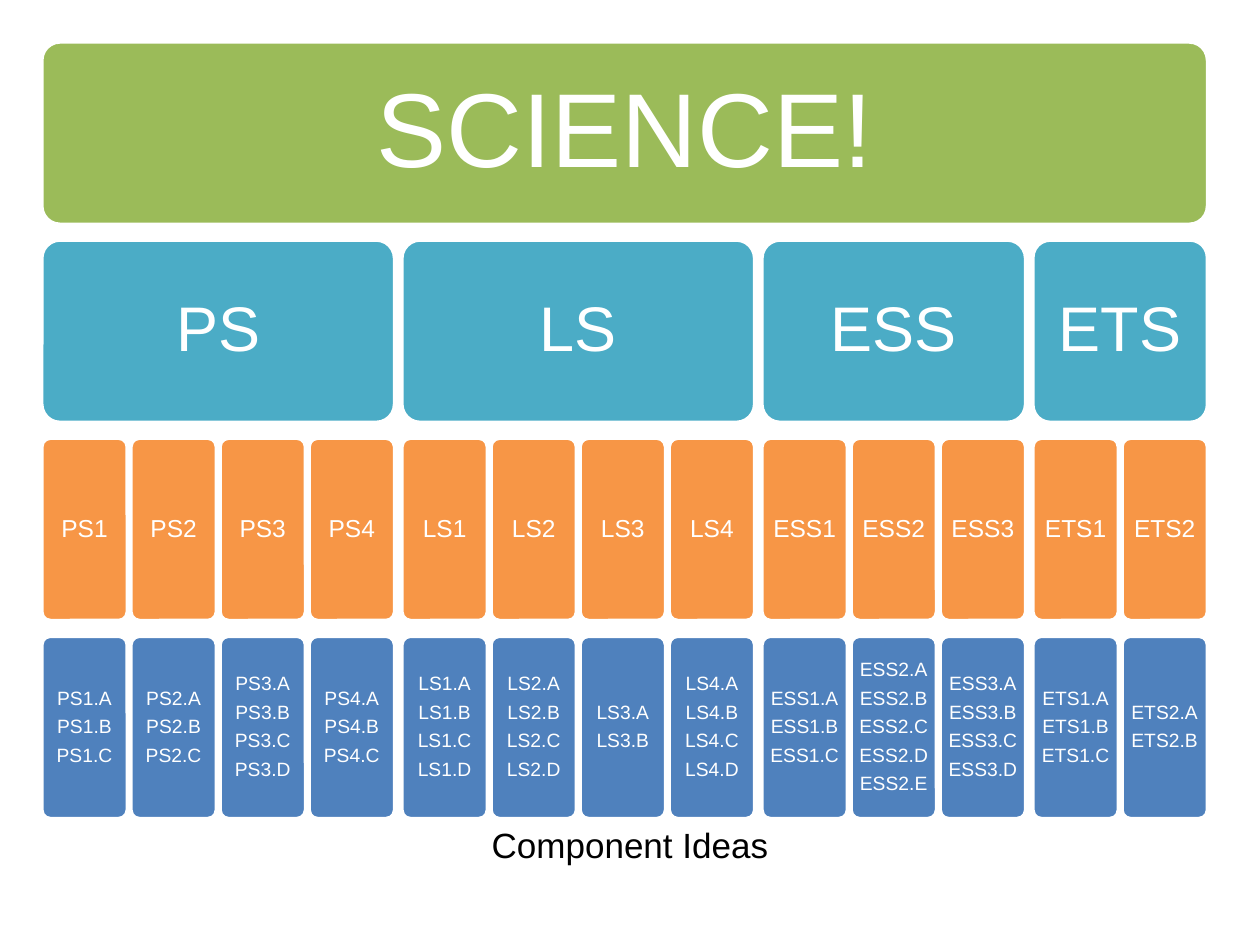
from dataclasses import dataclass

from pptx import Presentation
from pptx import util as u
from pptx.dml import color
from pptx.enum import shapes, text


@dataclass(frozen=True)
class Level:
    """Look of one row of cards."""
    fill: str
    size: float
    inset: float


@dataclass(frozen=True)
class Theme:
    """Colours, type sizes and spacing of the slide."""
    font: str = "Arial"
    light: str = "FFFFFF"
    dark: str = "000000"
    caption_size: float = 20
    gap: float = 2.07
    group_gap: float = 4.14
    row_gap: float = 9
    subject: Level = Level("9BBB59", 60, 18)
    discipline: Level = Level("4BACC6", 36, 10.8)
    core: Level = Level("F79646", 14, 4.2)
    component: Level = Level("4F81BD", 11, 3.3)


@dataclass(frozen=True)
class Box:
    """A rectangle in points."""
    left: float
    top: float
    width: float
    height: float

    def points(self):
        """Return the four lengths for a shape call."""
        return [u.Pt(value) for value in (self.left, self.top, self.width, self.height)]


THEME = Theme()
IDEAS = {
    "PS": ["ABC", "ABC", "ABCD", "ABC"],
    "LS": ["ABCD", "ABCD", "AB", "ABCD"],
    "ESS": ["ABC", "ABCDE", "ABCD"],
    "ETS": ["ABC", "AB"],
}


def write_lines(frame, lines, size, tint):
    """Write centred paragraphs in a text frame."""
    frame.word_wrap = True
    for index, line in enumerate(lines):
        para = frame.paragraphs[0] if index == 0 else frame.add_paragraph()
        para.text = line
        para.alignment = text.PP_ALIGN.CENTER
        para.font.name = THEME.font
        para.font.size = u.Pt(size)
        para.font.color.rgb = color.RGBColor.from_string(tint)


def add_card(page, box, level, lines):
    """Draw a rounded card with centred text."""
    card = page.shapes.add_shape(shapes.MSO_SHAPE.ROUNDED_RECTANGLE, *box.points())
    card.adjustments[0] = 0.1
    card.shadow.inherit = False
    card.fill.solid()
    card.fill.fore_color.rgb = color.RGBColor.from_string(level.fill)
    card.line.color.rgb = color.RGBColor.from_string(THEME.light)
    card.line.width = u.Pt(2)
    frame = card.text_frame
    frame.vertical_anchor = text.MSO_ANCHOR.MIDDLE
    frame.margin_left = frame.margin_right = u.Pt(level.inset)
    frame.margin_top = frame.margin_bottom = u.Pt(level.inset)
    write_lines(frame, lines, level.size, THEME.light)
    for para in frame.paragraphs:
        para.line_spacing = 0.9
        para.space_after = u.Pt(round(level.size * 0.4, 1))


def add_discipline(page, box, name, components, row_height):
    """Place a discipline card above its core and component ideas."""
    pitch = row_height + THEME.row_gap
    count = len(components)
    width = (box.width - THEME.gap * (count - 1)) / count
    add_card(page, Box(box.left, box.top, box.width, row_height), THEME.discipline, [name])
    for index, letters in enumerate(components):
        left = box.left + index * (width + THEME.gap)
        core = f"{name}{index + 1}"
        add_card(page, Box(left, box.top + pitch, width, row_height), THEME.core, [core])
        add_card(page, Box(left, box.top + 2 * pitch, width, row_height), THEME.component,
                 [f"{core}.{letter}" for letter in letters])


def add_hierarchy(page, box):
    """Fill the box with the subject and its disciplines."""
    row_height = (box.height - 3 * THEME.row_gap) / 4
    add_card(page, Box(box.left, box.top, box.width, row_height), THEME.subject, ["SCIENCE!"])
    columns = sum(len(components) for components in IDEAS.values())
    gaps = (columns - len(IDEAS)) * THEME.gap + (len(IDEAS) - 1) * THEME.group_gap
    column = (box.width - gaps) / columns
    left, top = box.left, box.top + row_height + THEME.row_gap
    for name, components in IDEAS.items():
        width = len(components) * (column + THEME.gap) - THEME.gap
        group = Box(left, top, width, box.top + box.height - top)
        add_discipline(page, group, name, components, row_height)
        left += width + THEME.group_gap


def add_caption(page, box):
    """Place the caption below the hierarchy."""
    caption = page.shapes.add_textbox(*box.points())
    write_lines(caption.text_frame, ["Component Ideas"], THEME.caption_size, THEME.dark)


def main():
    """Build and save the slide."""
    deck = Presentation()
    deck.slide_width, deck.slide_height = u.Pt(720), u.Pt(540)
    page = deck.slides.add_slide(deck.slide_layouts[6])
    add_hierarchy(page, Box(23.9, 24, 666.1, 443.8))
    add_caption(page, Box(189, 466.8, 342, 31.5))
    deck.save("out.pptx")


if __name__ == "__main__":
    main()
